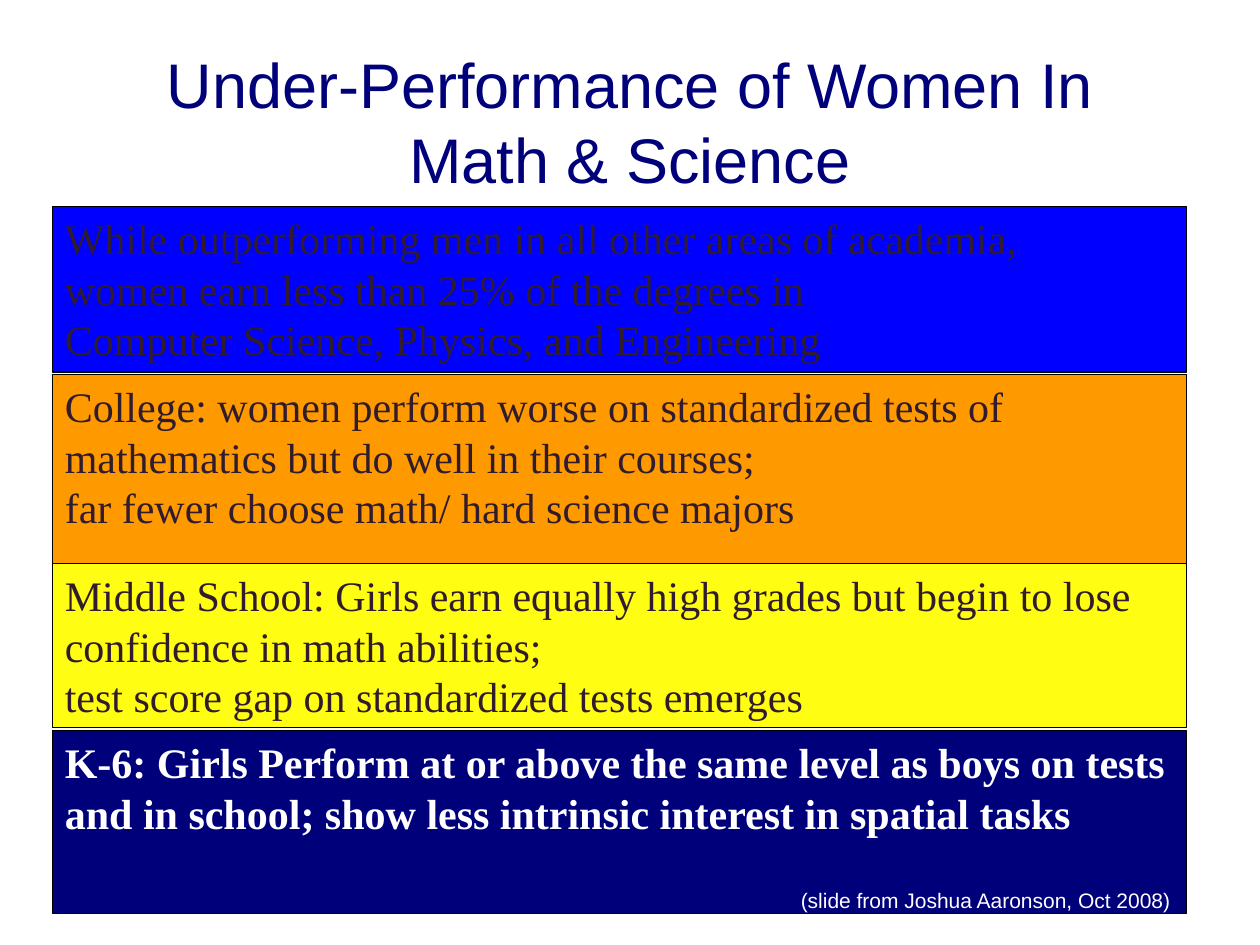
import pptx
import pptx.util
import pptx.dml.color
import pptx.enum.shapes
import pptx.enum.text

Pt = pptx.util.Pt
RGBColor = pptx.dml.color.RGBColor
ALIGN = pptx.enum.text.PP_ALIGN
ANCHOR = pptx.enum.text.MSO_ANCHOR

NAVY = RGBColor(0x01, 0x00, 0x7B)
BLUE = RGBColor(0x00, 0x00, 0xFF)
ORANGE = RGBColor(0xFF, 0x99, 0x00)
YELLOW = RGBColor(0xFF, 0xFD, 0x11)
BLACK = RGBColor(0x00, 0x00, 0x00)
WHITE = RGBColor(0xFF, 0xFF, 0xFF)
DARK = RGBColor(0x30, 0x1C, 0x2C)


def write_text(shape, lines, size, font, color, bold=False,
               align=ALIGN.LEFT, anchor=ANCHOR.TOP, wrap=True):
    frame = shape.text_frame
    frame.word_wrap = wrap
    frame.vertical_anchor = anchor
    for index, line in enumerate(lines):
        paragraph = frame.paragraphs[0] if index == 0 else frame.add_paragraph()
        paragraph.alignment = align
        run = paragraph.add_run()
        run.text = line
        run.font.size = Pt(size)
        run.font.name = font
        run.font.bold = bold
        run.font.color.rgb = color


presentation = pptx.Presentation()
presentation.slide_width = Pt(720)
presentation.slide_height = Pt(540)
slide = presentation.slides.add_slide(presentation.slide_layouts[6])
slide.background.fill.solid()
slide.background.fill.fore_color.rgb = WHITE

title = slide.shapes.add_textbox(Pt(54), Pt(18), Pt(612), Pt(102))
write_text(title, ["Under-Performance of Women In Math & Science"], size=36,
           font="Arial", color=NAVY, align=ALIGN.CENTER, anchor=ANCHOR.MIDDLE)

bands = [
    (118, 94.5, BLUE, 1, DARK, False,
     ["While outperforming men in all other areas of academia,",
      "women earn less than 25% of the degrees in",
      "Computer Science, Physics, and Engineering"]),
    (214, 128, ORANGE, 1, DARK, False,
     ["College: women perform worse on standardized tests of mathematics "
      "but do well in their courses;",
      "far fewer choose math/ hard science majors"]),
    (322, 93.5, YELLOW, 0.25, DARK, False,
     ["Middle School: Girls earn equally high grades but begin to lose "
      "confidence in math abilities;",
      "test score gap on standardized tests emerges"]),
    (417.5, 104.5, NAVY, 1, WHITE, True,
     ["K-6: Girls Perform at or above the same level as boys on tests "
      "and in school; show less intrinsic interest in spatial tasks"]),
]
for top, height, fill, line_width, color, bold, lines in bands:
    band = slide.shapes.add_shape(pptx.enum.shapes.MSO_SHAPE.RECTANGLE,
                                  Pt(30), Pt(top), Pt(648), Pt(height))
    band.shadow.inherit = False
    band.fill.solid()
    band.fill.fore_color.rgb = fill
    band.line.color.rgb = BLACK
    band.line.width = Pt(line_width)
    write_text(band, lines, size=24, font="Times New Roman", color=color, bold=bold)

credit = slide.shapes.add_textbox(Pt(450.5), Pt(503.5), Pt(228), Pt(21.5))
write_text(credit, ["(slide from Joshua Aaronson, Oct 2008)"], size=12,
           font="Arial", color=WHITE, wrap=False)

presentation.save("out.pptx")
